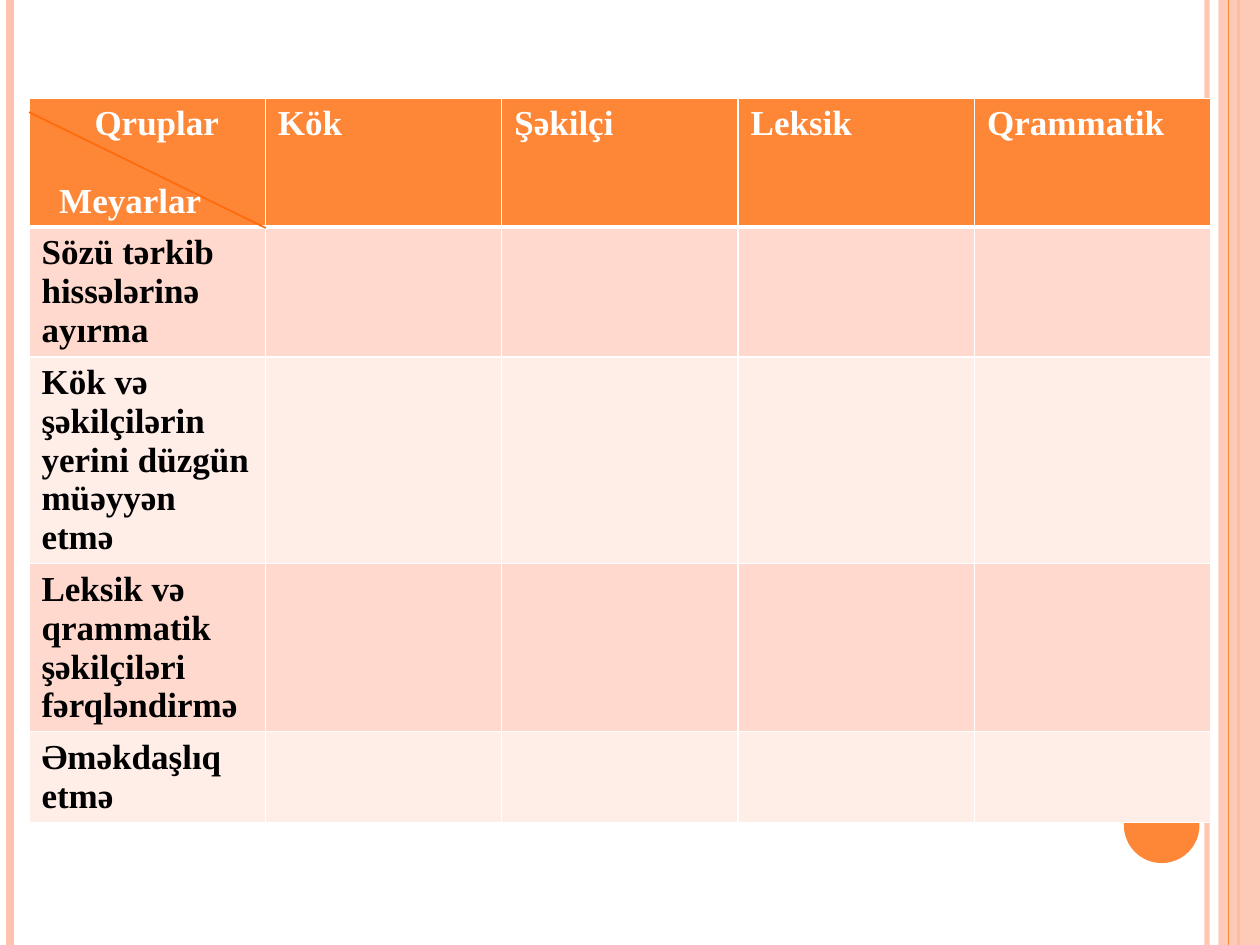
import pptx
import pptx.dml.color
import pptx.enum.shapes
import pptx.oxml.ns
import pptx.util
from dataclasses import dataclass
from lxml import etree

Inches = pptx.util.Inches
Pt = pptx.util.Pt
qn = pptx.oxml.ns.qn


@dataclass(frozen=True)
class Theme:
    font: str = "Times New Roman"
    size: int = 20
    orange: str = "FE8637"
    peach: str = "FEC3AE"
    diagonal: str = "FF6B0A"
    bands: tuple = ("FFD9CE", "FFEDE8")
    white: str = "FFFFFF"
    black: str = "000000"


THEME = Theme()
HEADINGS = ["Kök", "Şəkilçi", "Leksik", "Qrammatik"]
CRITERIA = [
    "Sözü tərkib hissələrinə ayırma",
    "Kök və şəkilçilərin yerini düzgün müəyyən etmə",
    "Leksik və qrammatik şəkilçiləri fərqləndirmə",
    "Əməkdaşlıq etmə",
]
ROW_HEIGHTS = [1.02, 1.03, 1.64, 1.33, 0.72]
COLUMN_WIDTH = 1.876
TABLE_LEFT, TABLE_TOP = 0.23, 0.78


def rgb(value):
    return pptx.dml.color.RGBColor.from_string(value)


def set_opacity(element, percent):
    color = next(element.iter(qn("a:srgbClr")))
    etree.SubElement(color, qn("a:alpha"), val=str(percent * 1000))


def add_line(page, start, end, color, width, opacity=100):
    line = page.shapes.add_connector(
        pptx.enum.shapes.MSO_CONNECTOR.STRAIGHT,
        *map(Inches, start + end))
    line.line.color.rgb = rgb(color)
    line.line.width = Pt(width)
    properties = line._element.spPr
    if opacity < 100:
        set_opacity(properties, opacity)
    etree.SubElement(properties, qn("a:effectLst"))


def add_solid(page, kind, left, top, width, height, color, opacity=100):
    shape = page.shapes.add_shape(
        kind, *map(Inches, (left, top, width, height)))
    shape.shadow.inherit = False
    shape.fill.solid()
    shape.fill.fore_color.rgb = rgb(color)
    shape.line.fill.background()
    if opacity < 100:
        set_opacity(shape._element.spPr, opacity)


def write(para, text, *, color, indent=0, before=0):
    para.space_before = Pt(before)
    if indent:
        para._p.get_or_add_pPr().set("marL", str(Inches(indent)))
    span = para.add_run()
    span.text = text
    span.font.name = THEME.font
    span.font.size = Pt(THEME.size)
    span.font.bold = True
    span.font.color.rgb = rgb(color)


def style_cell(cell, fill, top=1, bottom=1):
    properties = cell._tc.get_or_add_tcPr()
    for side, width in (("L", 1), ("R", 1), ("T", top), ("B", bottom)):
        border = etree.SubElement(properties, qn(f"a:ln{side}"), w=str(Pt(width)))
        solid = etree.SubElement(border, qn("a:solidFill"))
        etree.SubElement(solid, qn("a:srgbClr"), val=THEME.white)
    cell.fill.solid()
    cell.fill.fore_color.rgb = rgb(fill)


def add_decoration(page):
    shapes = pptx.enum.shapes.MSO_SHAPE
    add_line(page, (9.58, 0), (9.58, 7.5), THEME.peach, 3, opacity=93)
    add_line(page, (0.08, 0), (0.08, 7.5), THEME.peach, 4.5)
    add_line(page, (9.83, 0), (9.83, 7.5), THEME.orange, 1.5)
    add_solid(page, shapes.RECTANGLE, 9.67, 0, 0.33, 7.5, THEME.peach, opacity=87)
    add_line(page, (9.75, 0), (9.75, 7.5), THEME.orange, 0.75)
    add_solid(page, shapes.OVAL, 8.92, 6.25, 0.6, 0.6, THEME.orange)


def add_criteria_table(page):
    column_count = len(HEADINGS) + 1
    table = page.shapes.add_table(
        len(ROW_HEIGHTS), column_count, Inches(TABLE_LEFT), Inches(TABLE_TOP),
        Inches(COLUMN_WIDTH * column_count), Inches(sum(ROW_HEIGHTS))).table
    for column in table.columns:
        column.width = Inches(COLUMN_WIDTH)
    for index, (row, height) in enumerate(zip(table.rows, ROW_HEIGHTS)):
        row.height = Inches(height)
        for cell in row.cells:
            if index == 0:
                style_cell(cell, THEME.orange, bottom=3)
            else:
                style_cell(cell, THEME.bands[(index - 1) % 2],
                           top=3 if index == 1 else 1)

    # Corner cell names both axes
    corner = table.cell(0, 0).text_frame
    write(corner.paragraphs[0], "Qruplar", color=THEME.white, indent=0.42)
    write(corner.add_paragraph(), "Meyarlar", color=THEME.white,
          indent=0.14, before=22)

    # Column headings and row criteria
    for column, heading in enumerate(HEADINGS, 1):
        write(table.cell(0, column).text_frame.paragraphs[0], heading,
              color=THEME.white)
    for row, criterion in enumerate(CRITERIA, 1):
        write(table.cell(row, 0).text_frame.paragraphs[0], criterion,
              color=THEME.black)


def main():
    deck = pptx.Presentation()
    deck.slide_width, deck.slide_height = Inches(10), Inches(7.5)
    page = deck.slides.add_slide(deck.slide_layouts[6])
    add_decoration(page)
    add_criteria_table(page)
    # Diagonal divider of the corner cell
    add_line(page, (TABLE_LEFT, 0.89), (2.11, 1.81), THEME.diagonal, 1)
    deck.save("out.pptx")


if __name__ == "__main__":
    main()
